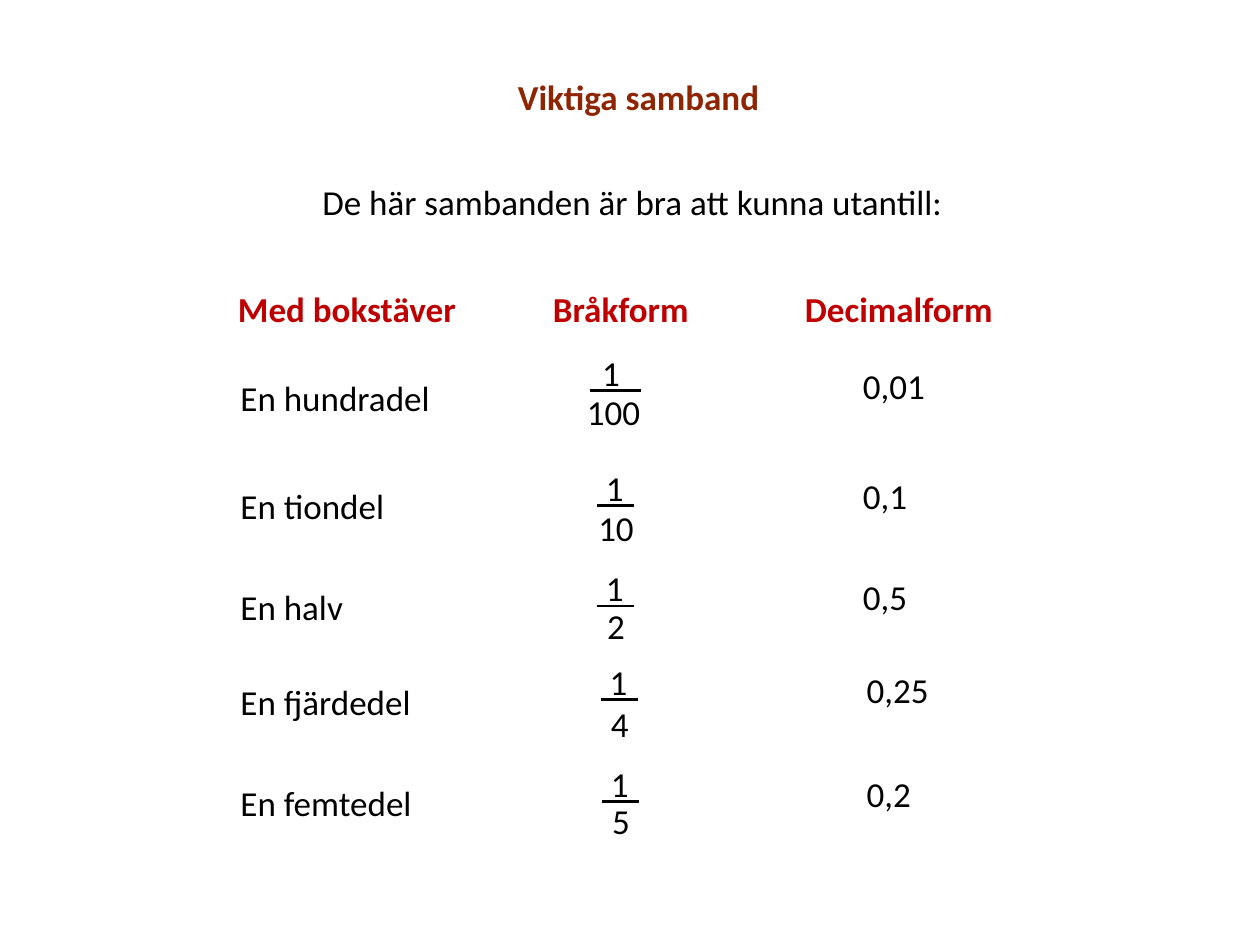
from dataclasses import dataclass

from lxml.etree import SubElement
from pptx import Presentation
from pptx.dml.color import RGBColor
from pptx.enum.shapes import MSO_CONNECTOR
from pptx.enum.text import MSO_ANCHOR, MSO_AUTO_SIZE, PP_ALIGN
from pptx.oxml.ns import qn
from pptx.util import Inches, Pt

BLACK = RGBColor(0x00, 0x00, 0x00)
BROWN = RGBColor(0x8E, 0x25, 0x03)
RED = RGBColor(0xC0, 0x00, 0x00)

# The grid has 100 columns and 75 rows.
WIDE, HIGH = Inches(10), Inches(7.5)
COL, ROW = WIDE / 100, HIGH / 75
LINE = 4.4  # height of one text line, in rows
STOPS = (20, 25, 40, 45)  # heading tab stops, in columns


@dataclass
class Link:
    """One number in words, as a fraction and as a decimal."""
    word: str
    under: str
    value: str
    bar: float  # row of the fraction bar
    left: float  # column where the bar starts
    width: float = 2.9
    shift: float = -0.2  # bottom number's column, from the bar
    top: float = -0.3  # numerator's column, from the bar
    drop: float = -0.5  # bottom number's row, from the bar
    lift: float = -2.1  # word's row, from the bar
    rise: float = -2.9  # decimal's row, from the bar
    right: float = 67.5  # decimal's column


LINKS = (
    Link("En hundradel", "100", "0,01", 31, 46.8, width=4.1, shift=-1.2,
         top=0, lift=-1.6, rise=-2.6),
    Link("En tiondel", "10", "0,1", 40.1, 47.4, shift=-0.9, drop=-0.4),
    Link("En halv", "2", "0,5", 48.1, 47.4, drop=-0.6),
    Link("En fjärdedel", "4", "0,25", 55.5, 47.7, drop=-0.2, lift=-2,
         right=67.8),
    Link("En femtedel", "5", "0,2", 63.6, 47.8, drop=-0.6, rise=-2.8,
         right=67.8),
)


def write(home, text: str, col: float, row: float, width: float, *,
          box=None, color=BLACK, bold=False):
    """Put one line of text in a new text box, or in the given box."""
    place = (round(col * COL), round(row * ROW),
             round(width * COL), round(LINE * ROW))
    if box is None:
        box = home.add_textbox(*place)
    else:
        box.left, box.top, box.width, box.height = place
    frame = box.text_frame
    frame.word_wrap = True
    frame.auto_size = MSO_AUTO_SIZE.SHAPE_TO_FIT_TEXT
    frame.vertical_anchor = MSO_ANCHOR.TOP
    para = frame.paragraphs[0]
    para.alignment = PP_ALIGN.LEFT
    run = para.add_run()
    run.text = text
    font = run.font
    font.name, font.size, font.bold = "Calibri", Pt(20), bold
    font.color.rgb = color
    return box


def set_tabs(box) -> None:
    props = box.text_frame.paragraphs[0]._p.get_or_add_pPr()
    tabs = SubElement(props, qn("a:tabLst"))
    for stop in STOPS:
        SubElement(tabs, qn("a:tab"), pos=str(round(stop * COL)), algn="l")


def draw_bar(home, link: Link) -> None:
    y = round(link.bar * ROW)
    bar = home.add_connector(
        MSO_CONNECTOR.STRAIGHT, round(link.left * COL), y,
        round((link.left + link.width) * COL), y)
    bar.line.color.rgb = BLACK
    bar.line.width = Pt(1.5)
    SubElement(bar._element.spPr, qn("a:effectLst"))


def draw_link(home, link: Link) -> None:
    write(home, link.word, 18.1, link.bar + link.lift, 18.2)
    part = home.add_group_shape().shapes
    write(part, "1", link.left + link.top, link.bar - 3.6, 5.1)
    write(part, link.under, link.left + link.shift, link.bar + link.drop, 7.6)
    draw_bar(part, link)
    write(home, link.value, link.right, link.bar + link.rise, 7.6)


def main() -> None:
    deck = Presentation()
    deck.slide_width, deck.slide_height = WIDE, HIGH
    slide = deck.slides.add_slide(deck.slide_layouts[5])
    home = slide.shapes
    write(home, "Viktiga samband", 40.1, 5.5, 26.1,
          box=home.title, color=BROWN, bold=True)
    write(home, "De här sambanden är bra att kunna utantill:",
          24.6, 13.8, 53.4)
    heads = write(home, "Med bokstäver\t\tBråkform \t\tDecimalform",
                  17.9, 22.3, 66, color=RED, bold=True)
    set_tabs(heads)
    for link in LINKS:
        draw_link(home, link)
    deck.save("out.pptx")


if __name__ == "__main__":
    main()
